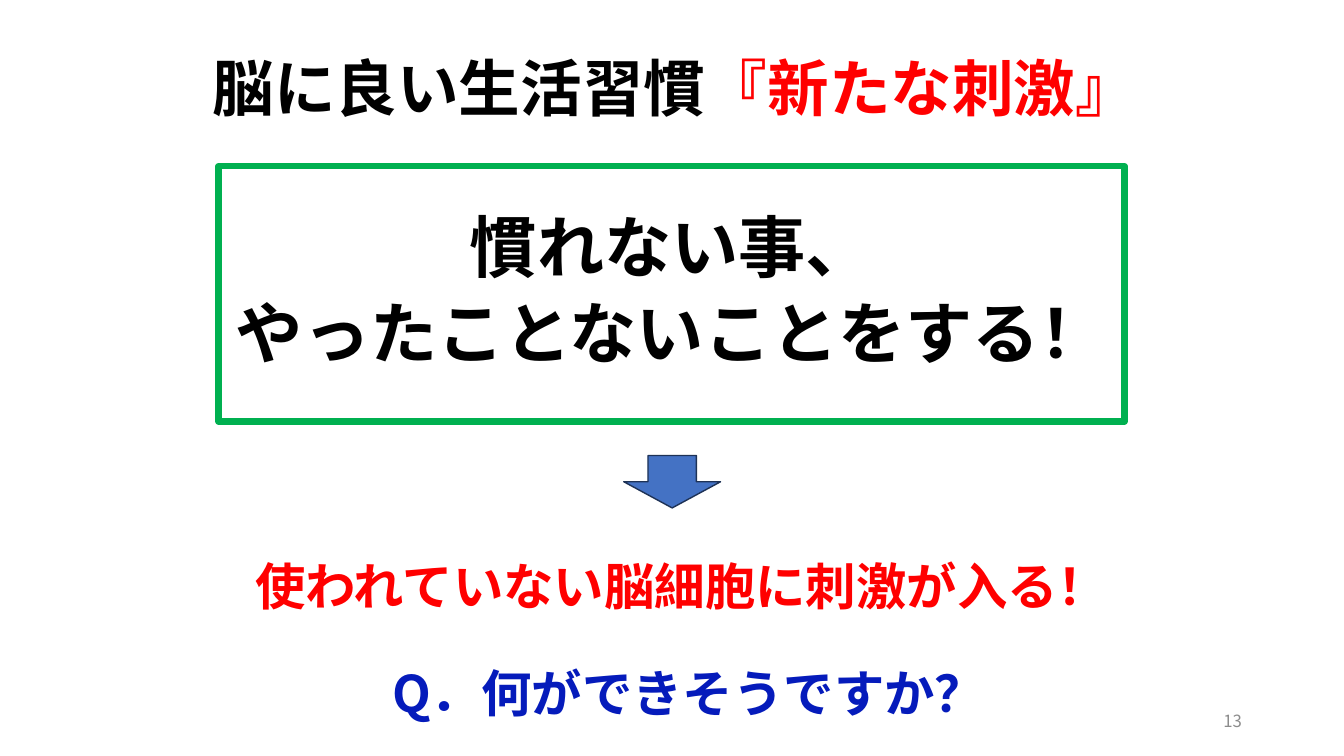
import pptx
import pptx.dml.color
import pptx.enum.shapes
import pptx.enum.text
import pptx.oxml
import pptx.oxml.ns
import pptx.util

Cm = pptx.util.Cm
Pt = pptx.util.Pt
Shape = pptx.enum.shapes.MSO_SHAPE
Align = pptx.enum.text.PP_ALIGN
Anchor = pptx.enum.text.MSO_ANCHOR
Fit = pptx.enum.text.MSO_AUTO_SIZE

BLACK, RED, BLUE, GREY = "000000", "FF0000", "051BBB", "8C8C8C"
WHITE, GREEN = "FFFFFF", "00B050"


def colour(value):
    return pptx.dml.color.RGBColor.from_string(value)


def drawing_element(tag, attributes=""):
    namespace = pptx.oxml.ns.nsdecls("a")
    return pptx.oxml.parse_xml(f"<a:{tag} {namespace} {attributes}/>")


def set_values(target, values):
    for name, value in values.items():
        setattr(target, name, value)


class SlideBuilder:
    """Holds the font and the current page."""

    font_name = "Noto Sans CJK JP"

    def __init__(self, page):
        self.page = page

    def add_lines(self, shape, lines, size, bold=True, frame=None, layout=None):
        """Fill a shape with lines, each a list of (wording, colour) spans."""
        text = shape.text_frame
        set_values(text, {"word_wrap": True, **(frame or {})})
        for index, line in enumerate(lines):
            para = text.add_paragraph() if index else text.paragraphs[0]
            set_values(para, layout or {})
            for wording, shade in line:
                span = para.add_run()
                span.text = wording
                set_values(span.font, {"name": self.font_name, "size": Pt(size), "bold": bold})
                span.font.color.rgb = colour(shade)
                span.font._element.append(
                    drawing_element("ea", f'typeface="{self.font_name}"'))

    def text_box(self, place, lines, size, **style):
        box = self.page.shapes.add_textbox(*map(Cm, place))
        self.add_lines(box, lines, size, **style)

    def shape(self, kind, place, fill=None, line=None, width=1):
        shape = self.page.shapes.add_shape(kind, *map(Cm, place))
        shape.shadow.inherit = False
        if fill:
            shape.fill.solid()
            shape.fill.fore_color.rgb = colour(fill)
        else:
            shape.fill.background()
        if line:
            shape.line.color.rgb = colour(line)
            shape.line.width = Pt(width)
        else:
            shape.line.fill.background()
        return shape

    def framed_message(self, place, lines, size, **style):
        box = self.shape(Shape.RECTANGLE, place, line=GREEN, width=4.5)
        box.line._get_or_add_ln().append(drawing_element("round"))
        self.add_lines(box, lines, size, **style)

    def banner(self, place, wording, shade):
        box = self.shape(Shape.RECTANGLE, place, fill=WHITE)
        self.add_lines(box, [[(wording, shade)]], 36,
                       frame={"vertical_anchor": Anchor.TOP, "auto_size": Fit.SHAPE_TO_FIT_TEXT},
                       layout={"alignment": Align.CENTER, "line_spacing": 1.5})


def main():
    deck = pptx.Presentation()
    set_values(deck, {"slide_width": Cm(33.87), "slide_height": Cm(19.05)})
    builder = SlideBuilder(deck.slides.add_slide(deck.slide_layouts[6]))
    middle = {"vertical_anchor": Anchor.MIDDLE}

    # Title
    builder.text_box((5.11, 0.48, 24.13, 3.68),
                     [[("脳に良い生活習慣", BLACK), ("『新たな刺激』", RED)]], 44,
                     frame=middle, layout={"line_spacing": 0.9})

    # Main message
    builder.framed_message((5.51, 4.19, 22.83, 6.43),
                           [[("慣れない事、", BLACK)],
                            [("やったことないことをする！", BLACK)]], 48,
                           frame=middle,
                           layout={"alignment": Align.CENTER, "line_spacing": 0.9,
                                   "space_before": Pt(10)})

    # Page number
    builder.text_box((23.93, 17.65, 7.62, 1.02), [[("13", GREY)]], 12, bold=False,
                     frame=middle, layout={"alignment": Align.RIGHT})

    # Effect, arrow and question
    builder.banner((5.77, 13.11, 22.83, 2.36), "使われていない脳細胞に刺激が入る！", RED)
    builder.shape(Shape.DOWN_ARROW, (15.72, 11.48, 2.44, 1.32), fill="4472C4", line="1E3256")
    builder.banner((5.94, 15.8, 22.83, 2.36), "Q．何ができそうですか？", BLUE)

    deck.save("out.pptx")


if __name__ == "__main__":
    main()
